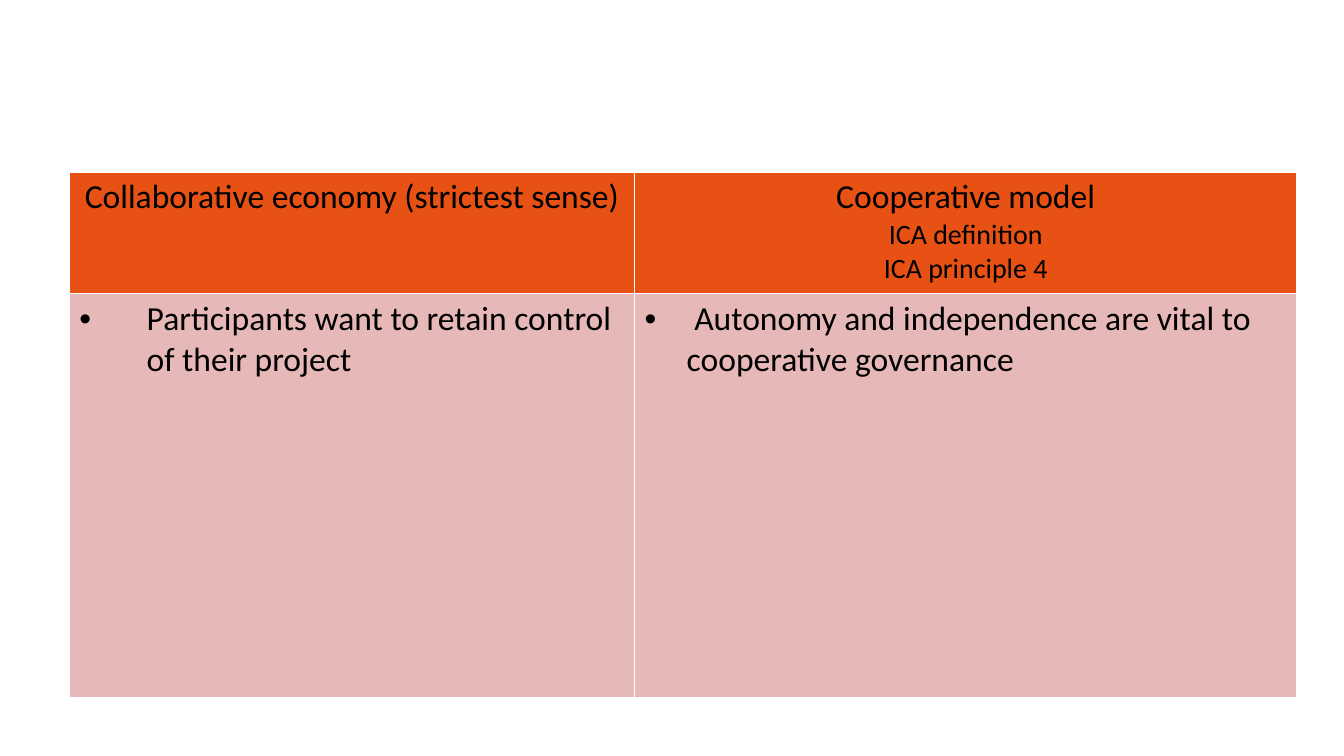
"""Builds a slide comparing the collaborative economy with the cooperative model."""
import lxml.etree
import pptx
import pptx.dml.color
import pptx.enum.text
import pptx.oxml.ns
import pptx.util

Pt = pptx.util.Pt
qn = pptx.oxml.ns.qn
BLACK = pptx.dml.color.RGBColor(0x00, 0x00, 0x00)
WHITE = pptx.dml.color.RGBColor(0xFF, 0xFF, 0xFF)
ORANGE = pptx.dml.color.RGBColor(0xE7, 0x51, 0x13)
PINK = pptx.dml.color.RGBColor(0xE6, 0xB9, 0xB8)
COLUMN_WIDTHS = (302.8, 354.8)
ROW_HEIGHTS = (65.3, 216.5)


def add_text(para, text, size=18, color=BLACK, align=None, bullet_indent=None):
    """Write one formatted paragraph, with a hanging bullet if an indent is given."""
    if bullet_indent:
        properties = para._p.get_or_add_pPr()
        properties.set("marL", str(Pt(bullet_indent)))
        properties.set("indent", str(-Pt(bullet_indent)))
        font = lxml.etree.SubElement(properties, qn("a:buFont"))
        font.set("typeface", "Arial")
        lxml.etree.SubElement(properties, qn("a:buChar")).set("char", "•")
    para.alignment = align
    span = para.add_run()
    span.text = text
    span.font.name = "Calibri"
    span.font.size = Pt(size)
    span.font.bold = False
    span.font.color.rgb = color


def style_cell(cell, fill):
    """Give a cell its margins, white borders and fill."""
    cell.margin_left = cell.margin_right = Pt(5.4)
    cell.margin_top = cell.margin_bottom = Pt(2.7)
    properties = cell._tc.get_or_add_tcPr()
    for side in ("L", "R", "T", "B"):
        line = lxml.etree.SubElement(properties, qn(f"a:ln{side}"))
        line.set("w", str(Pt(1)))
        solid = lxml.etree.SubElement(line, qn("a:solidFill"))
        lxml.etree.SubElement(solid, qn("a:srgbClr")).set("val", str(WHITE))
    cell.fill.solid()
    cell.fill.fore_color.rgb = fill


def fill_cell(cell, fill, lines, **text_format):
    """Style a cell and write its (text, size) lines."""
    style_cell(cell, fill)
    frame = cell.text_frame
    for index, (text, size) in enumerate(lines):
        para = frame.add_paragraph() if index else frame.paragraphs[0]
        add_text(para, text, size=size, **text_format)


def add_comparison_table(page):
    """Add the empty two-by-two table and return it."""
    frame = page.shapes.add_table(
        2, 2, Pt(37.2), Pt(92), Pt(sum(COLUMN_WIDTHS)), Pt(sum(ROW_HEIGHTS)))
    table = frame.table
    for column, width in zip(table.columns, COLUMN_WIDTHS):
        column.width = Pt(width)
    for row, height in zip(table.rows, ROW_HEIGHTS):
        row.height = Pt(height)
    return table


def main():
    """Build and save the deck."""
    deck = pptx.Presentation()
    deck.slide_width, deck.slide_height = Pt(720), Pt(405)
    page = deck.slides.add_slide(deck.slide_layouts[6])
    table = add_comparison_table(page)

    headings = (
        [("Collaborative economy (strictest sense)", 18)],
        [("Cooperative model", 18), ("ICA definition", 15), ("ICA principle 4", 15)],
    )
    points = (
        ("Participants want to retain control of their project", 36),
        (" Autonomy and independence are vital to cooperative governance", 22.5),
    )
    for column, (heading, (point, indent)) in enumerate(zip(headings, points)):
        fill_cell(table.cell(0, column), ORANGE, heading,
                  align=pptx.enum.text.PP_ALIGN.CENTER)
        fill_cell(table.cell(1, column), PINK, [(point, 18)], bullet_indent=indent)

    deck.save("out.pptx")


if __name__ == "__main__":
    main()
